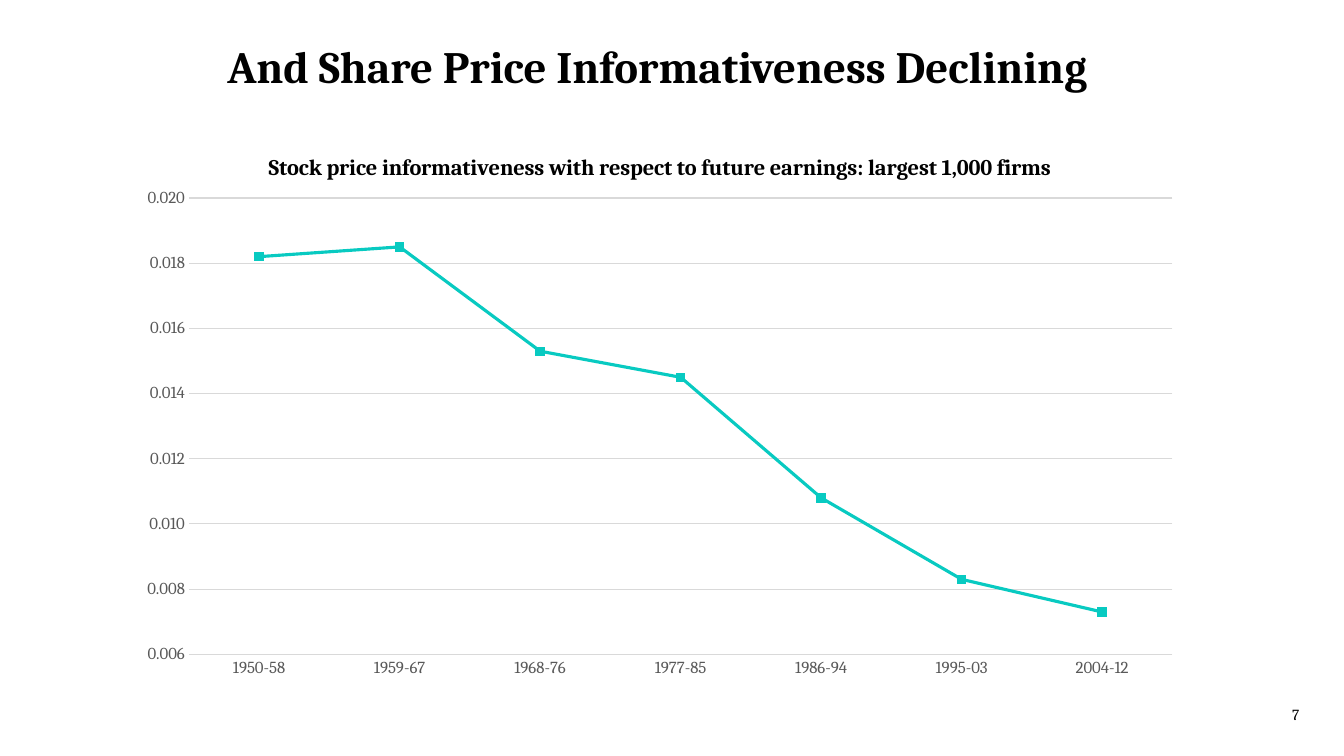
from dataclasses import dataclass
from typing import Any

from lxml.etree import SubElement
from pptx import Presentation
from pptx.chart.data import CategoryChartData
from pptx.dml.color import RGBColor
from pptx.enum.chart import XL_CHART_TYPE as ChartType, XL_MARKER_STYLE as Marker, XL_TICK_MARK as Tick
from pptx.enum.text import MSO_ANCHOR as Anchor, MSO_AUTO_SIZE as AutoSize, PP_ALIGN as Align
from pptx.oxml.ns import qn
from pptx.util import Emu, Pt

PX = 9525
FONT = "Cambria"
BLACK, GREY, RULE, TEAL = "000000", "595959", "D9D9D9", "08CAC1"
HEADING = "Stock price informativeness with respect to future earnings: largest 1,000 firms"
INFORMATIVENESS = {
    "1950-58": 0.0182,
    "1959-67": 0.0185,
    "1968-76": 0.0153,
    "1977-85": 0.0145,
    "1986-94": 0.0108,
    "1995-03": 0.0083,
    "2004-12": 0.0073,
}


@dataclass(frozen=True)
class Label:
    text: str
    box: tuple[int, int, int, int]
    size: int
    bold: bool
    align: Align
    frame: dict[str, Any]


LABELS = (
    Label("7", (1143, 666, 104, 29), 11, False, Align.RIGHT,
          {"word_wrap": True, "vertical_anchor": Anchor.MIDDLE}),
    Label("And Share Price Informativeness Declining", (207, 32, 936, 61), 32, True, Align.LEFT,
          {"word_wrap": True, "auto_size": AutoSize.SHAPE_TO_FIT_TEXT}),
)


def px(*lengths: int) -> list[Emu]:
    return [Emu(length * PX) for length in lengths]


def color(hex_code: str) -> RGBColor:
    return RGBColor.from_string(hex_code)


def assign(target: Any, values: dict[str, Any]) -> None:
    for name, value in values.items():
        setattr(target, name, value)


def style_font(font: Any, size: int, hex_code: str, bold: bool = False) -> None:
    assign(font, {"name": FONT, "size": Pt(size), "bold": bold})
    font.color.rgb = color(hex_code)


def style_line(line: Any, hex_code: str, width: float) -> None:
    line.color.rgb = color(hex_code)
    line.width = Pt(width)


def set_layout(parent: Any, index: int, settings: dict[str, Any]) -> None:
    for old in parent.findall(qn("c:layout")):
        parent.remove(old)
    layout = SubElement(parent, qn("c:layout"))
    parent.insert(index, layout)
    manual = SubElement(layout, qn("c:manualLayout"))
    for name, value in settings.items():
        SubElement(manual, qn(f"c:{name}")).set("val", str(value))


def draw_label(slide: Any, label: Label) -> None:
    frame = slide.shapes.add_textbox(*px(*label.box)).text_frame
    assign(frame, label.frame)
    paragraph = frame.paragraphs[0]
    paragraph.alignment = label.align
    run = paragraph.add_run()
    run.text = label.text
    style_font(run.font, label.size, BLACK, label.bold)


def draw_chart(slide: Any) -> None:
    data = CategoryChartData(number_format="0.0000")
    data.categories = list(INFORMATIVENESS)
    data.add_series("Series 1", list(INFORMATIVENESS.values()))
    chart = slide.shapes.add_chart(ChartType.LINE_MARKERS, *px(120, 120, 1016, 536), data).chart
    chart.has_legend = False
    style_font(chart.font, 10, BLACK)

    chart.has_title = True
    heading = chart.chart_title.text_frame.paragraphs[0].add_run()
    heading.text = HEADING
    style_font(heading.font, 16, BLACK, True)
    edges = {"xMode": "edge", "yMode": "edge"}
    set_layout(chart.chart_title._element, 1, edges | {"x": 0.13, "y": 0.04})
    set_layout(chart._chartSpace.chart.plotArea, 0,
               {"layoutTarget": "inner"} | edges | {"x": 0.059, "y": 0.128, "w": 0.922, "h": 0.811})

    periods, scale = chart.category_axis, chart.value_axis
    for axis in (periods, scale):
        assign(axis, {"major_tick_mark": Tick.NONE, "minor_tick_mark": Tick.NONE})
        style_font(axis.tick_labels.font, 12, GREY)
    style_line(periods.format.line, RULE, 0.75)
    assign(scale, {"minimum_scale": 0.006, "maximum_scale": 0.02, "major_unit": 0.002,
                   "has_major_gridlines": True})
    assign(scale.tick_labels, {"number_format": "#,##0.000", "number_format_is_linked": False})
    scale.format.line.fill.background()
    style_line(scale.major_gridlines.format.line, RULE, 0.75)

    plot = chart.plots[0]
    plot.vary_by_categories = False
    decline = plot.series[0]
    decline.smooth = False
    style_line(decline.format.line, TEAL, 2.25)
    assign(decline.marker, {"style": Marker.SQUARE, "size": 6})
    decline.marker.format.fill.solid()
    decline.marker.format.fill.fore_color.rgb = color(TEAL)
    style_line(decline.marker.format.line, TEAL, 0.75)


def main() -> None:
    deck = Presentation()
    deck.slide_width, deck.slide_height = px(1280, 720)
    slide = deck.slides.add_slide(deck.slide_layouts[6])
    for label in LABELS:
        draw_label(slide, label)
    draw_chart(slide)
    deck.save("out.pptx")


if __name__ == "__main__":
    main()
